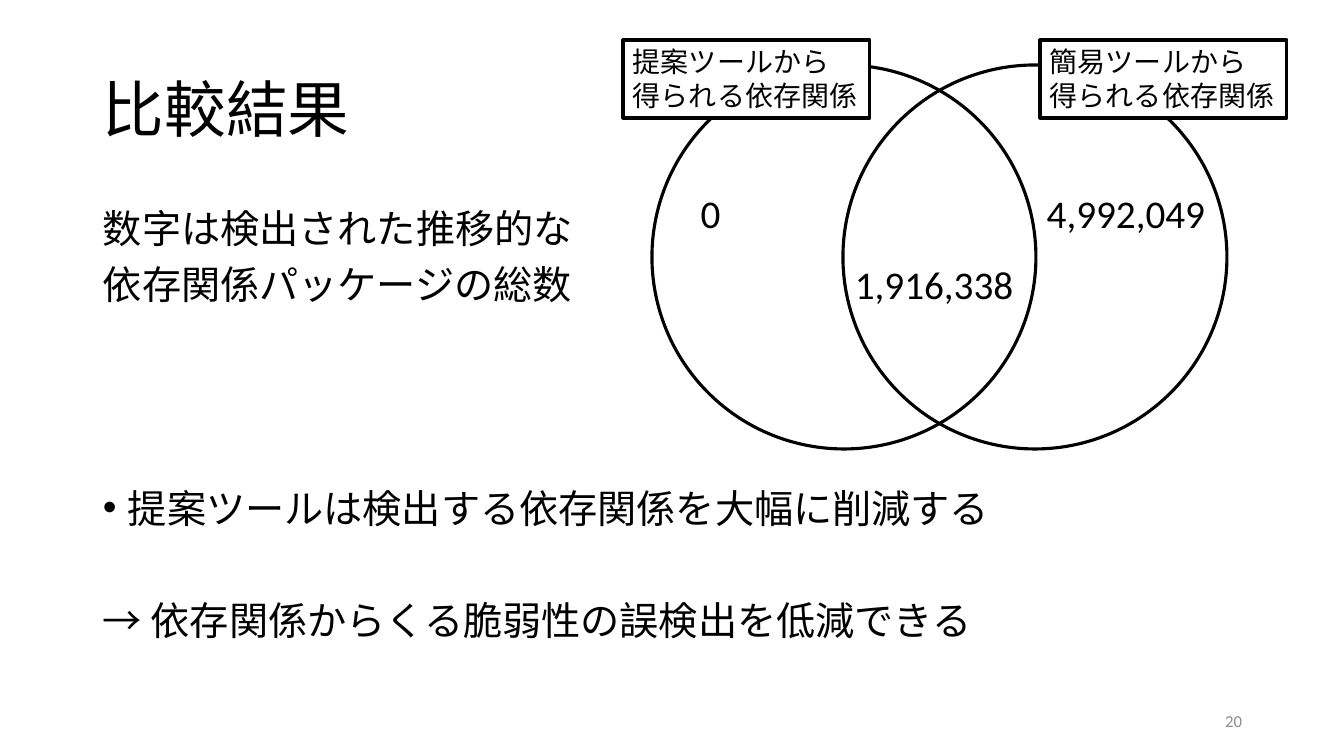
from pptx import Presentation
from pptx.dml.color import RGBColor
from pptx.enum.shapes import MSO_SHAPE
from pptx.enum.text import MSO_ANCHOR, PP_ALIGN
from pptx.oxml import parse_xml
from pptx.oxml.ns import nsdecls, qn
from pptx.util import Pt

BLACK = RGBColor(0x00, 0x00, 0x00)
WHITE = RGBColor(0xFF, 0xFF, 0xFF)
GRAY = RGBColor(0x8C, 0x8C, 0x8C)
LATIN, JAPANESE = "Calibri", "Noto Sans CJK JP"

TITLE = "比較結果"
PAGE = "20"
# text, space before in points, bulleted
STATEMENTS = [
    ("数字は検出された推移的な", 10, False),
    ("依存関係パッケージの総数", 10, False),
    ("提案ツールは検出する依存関係を大幅に削減する", 130, True),
    ("→ 依存関係からくる脆弱性の誤検出を低減できる", 50, False),
]
# label, label left, circle left
TOOLS = [
    ("提案ツールから\v得られる依存関係", 623, 652),
    ("簡易ツールから\v得られる依存関係", 1040, 843),
]
# count, box in px, alignment
COUNTS = [
    ("4,992,049", (1024, 184, 204, 57), PP_ALIGN.CENTER),
    ("0", (669, 184, 83, 57), PP_ALIGN.CENTER),
    ("1,916,338", (845, 255, 206, 57), PP_ALIGN.LEFT),
]
CIRCLE_TOP, DIAMETER = 65, 384
LABEL_TOP, LABEL_WIDTH, LABEL_HEIGHT = 40, 247, 78
BULLET_INDENT = 25

EMU_PER_PX = 914400 / 100.8


def px(length):
    return round(length * EMU_PER_PX)


def add_outlined(slide, preset, *box):
    shape = slide.shapes.add_shape(preset, *map(px, box))
    shape.shadow.inherit = False
    shape.fill.background()
    shape.line.color.rgb = BLACK
    shape.line.width = Pt(2.25)
    return shape


def add_text(paragraph, text, *, size, font=LATIN, color=BLACK,
             align=PP_ALIGN.LEFT, spacing=None, before=0):
    paragraph.text = text
    paragraph.alignment = align
    paragraph.space_before = Pt(before)
    if spacing:
        paragraph.line_spacing = spacing
    for run in paragraph.runs:
        run.font.name = font
        run.font.size = Pt(size)
        run.font.color.rgb = color
        if font == JAPANESE:
            run.font._element.find(qn("a:latin")).addnext(
                parse_xml(f'<a:ea {nsdecls("a")} typeface="{font}"/>'))


def add_frame(slide, box, anchor=MSO_ANCHOR.TOP):
    frame = slide.shapes.add_textbox(*map(px, box)).text_frame
    frame.word_wrap = True
    frame.vertical_anchor = anchor
    return frame


def add_bullet(paragraph):
    properties = paragraph._p.get_or_add_pPr()
    properties.set("marL", str(px(BULLET_INDENT)))
    properties.set("indent", str(-px(BULLET_INDENT)))
    properties.append(parse_xml(f'<a:buFont {nsdecls("a")} typeface="Arial"/>'))
    properties.append(parse_xml(f'<a:buChar {nsdecls("a")} char="•"/>'))


def main():
    deck = Presentation()
    deck.slide_width, deck.slide_height = px(1344), px(756)
    slide = deck.slides.add_slide(deck.slide_layouts[6])

    page = add_frame(slide, (950, 701, 302, 40), MSO_ANCHOR.MIDDLE)
    add_text(page.paragraphs[0], PAGE, size=12, color=GRAY, align=PP_ALIGN.RIGHT)

    for _, _, left in TOOLS:
        add_outlined(slide, MSO_SHAPE.OVAL, left, CIRCLE_TOP, DIAMETER, DIAMETER)
    for label, left, _ in TOOLS:
        box = add_outlined(slide, MSO_SHAPE.RECTANGLE, left, LABEL_TOP,
                           LABEL_WIDTH, LABEL_HEIGHT)
        box.fill.solid()
        box.fill.fore_color.rgb = WHITE
        box.text_frame.word_wrap = False
        box.text_frame.vertical_anchor = MSO_ANCHOR.TOP
        add_text(box.text_frame.paragraphs[0], label, size=20)

    for count, box, align in COUNTS:
        add_text(add_frame(slide, box).paragraphs[0], count, size=28, align=align)

    title = add_frame(slide, (93, 40, 1159, 146), MSO_ANCHOR.MIDDLE)
    add_text(title.paragraphs[0], TITLE, size=44, spacing=0.9)

    body = add_frame(slide, (93, 204, 1194, 512))
    for index, (statement, before, bulleted) in enumerate(STATEMENTS):
        paragraph = body.add_paragraph() if index else body.paragraphs[0]
        add_text(paragraph, statement, size=28, font=JAPANESE,
                 spacing=Pt(30), before=before)
        if bulleted:
            add_bullet(paragraph)

    deck.save("out.pptx")


if __name__ == "__main__":
    main()
